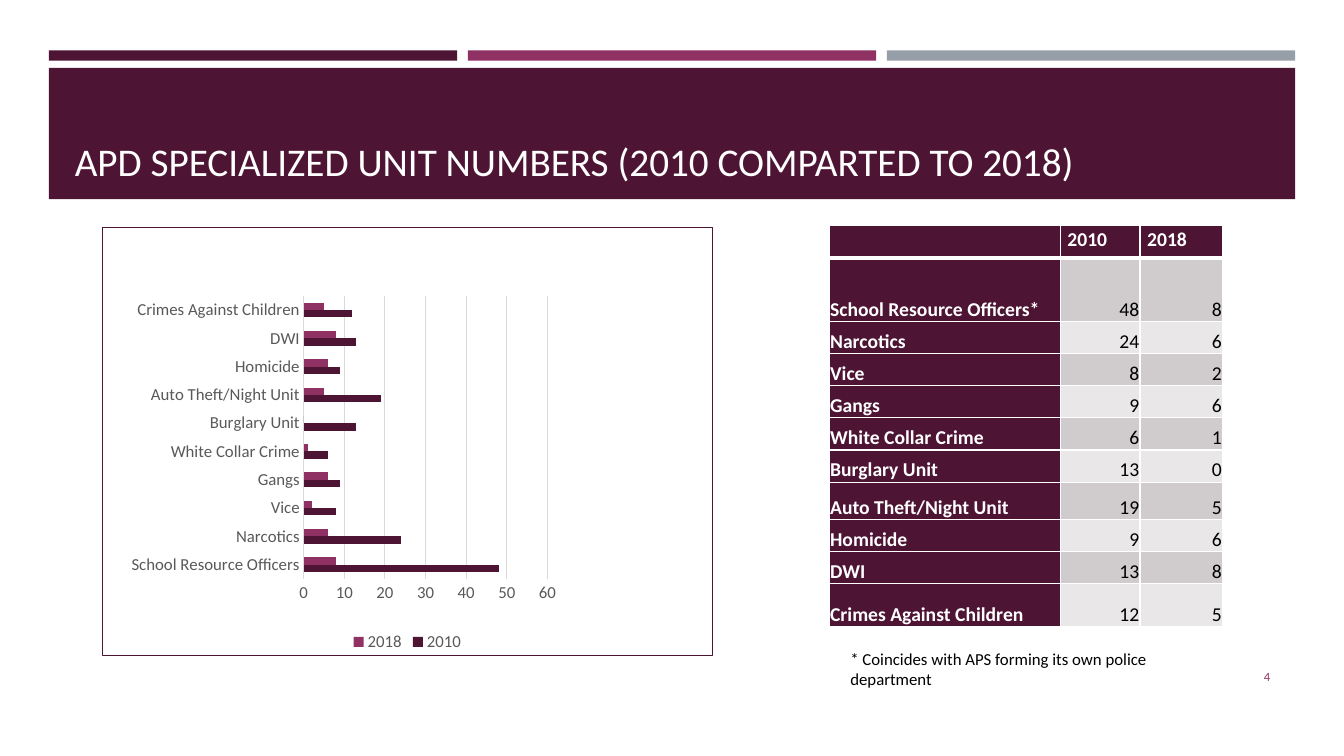
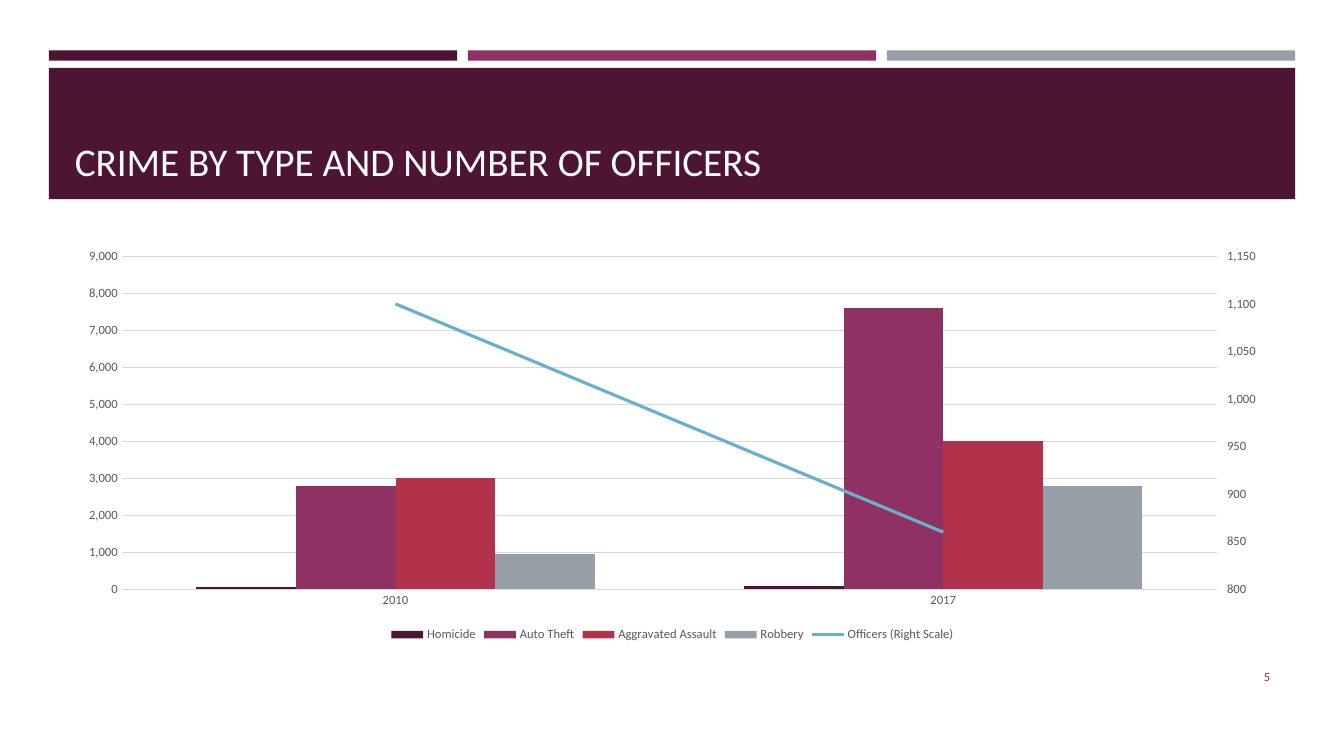
from dataclasses import dataclass

from pptx import Presentation
from pptx.chart.data import CategoryChartData
from pptx.dml.color import RGBColor
from pptx.enum.chart import XL_CHART_TYPE, XL_LEGEND_POSITION, XL_MARKER_STYLE, XL_TICK_MARK
from pptx.enum.shapes import MSO_SHAPE
from pptx.enum.text import MSO_ANCHOR, MSO_AUTO_SIZE, PP_ALIGN
from pptx.oxml import parse_xml
from pptx.oxml.ns import nsdecls, qn
from pptx.util import Cm, Pt

BAR, COLUMN = XL_CHART_TYPE.BAR_CLUSTERED, XL_CHART_TYPE.COLUMN_CLUSTERED
LEGEND_BOTTOM = XL_LEGEND_POSITION.BOTTOM
NO_MARKER = XL_MARKER_STYLE.NONE
TICK_NONE = XL_TICK_MARK.NONE
RECT = MSO_SHAPE.RECTANGLE
TOP, MIDDLE, BOTTOM = MSO_ANCHOR.TOP, MSO_ANCHOR.MIDDLE, MSO_ANCHOR.BOTTOM
NO_FIT = MSO_AUTO_SIZE.NONE
LEFT, RIGHT = PP_ALIGN.LEFT, PP_ALIGN.RIGHT

FONT = "Calibri"
COLORS = {
    "plum": "4D1434", "berry": "903163", "red": "B2324B", "gray": "969FA7",
    "blue": "66B1CE", "white": "FFFFFF", "black": "000000", "label": "595959",
    "grid": "D9D9D9", "row_dark": "D0CCCE", "row_light": "E9E7E8",
}


@dataclass(frozen=True)
class Box:
    """Position and size in centimetres."""
    left: float
    top: float
    width: float
    height: float

    def emu(self) -> tuple:
        return Cm(self.left), Cm(self.top), Cm(self.width), Cm(self.height)


@dataclass(frozen=True)
class Series:
    name: str
    values: tuple
    color: str


@dataclass(frozen=True)
class Unit:
    name: str
    y2010: int
    y2018: int
    height: float = 0.81
    note: str = ""


TITLE_BAND = Box(1.23, 1.71, 31.41, 3.31)
TITLE = Box(1.63, 1.96, 30.63, 2.82)
NUMBER = Box(29.34, 16.54, 2.92, 1.02)
STRIPES = ("plum", "berry", "gray")
STRIPE = Box(1.23, 1.27, 10.29, 0.26)
STRIPE_PITCH = 10.56

UNITS = (
    Unit("School Resource Officers", 48, 8, 1.6, "*"),
    Unit("Narcotics", 24, 6),
    Unit("Vice", 8, 2),
    Unit("Gangs", 9, 6),
    Unit("White Collar Crime", 6, 1),
    Unit("Burglary Unit", 13, 0),
    Unit("Auto Theft/Night Unit", 19, 5, 0.94),
    Unit("Homicide", 9, 6),
    Unit("DWI", 13, 8),
    Unit("Crimes Against Children", 12, 5, 1.07),
)
CRIMES = (
    Series("Homicide", (50, 80), "plum"),
    Series("Auto Theft", (2800, 7600), "berry"),
    Series("Aggravated Assault", (3000, 4000), "red"),
    Series("Robbery", (950, 2800), "gray"),
    Series("Officers (Right Scale)", (1100, 860), "blue"),
)


def rgb(name: str) -> RGBColor:
    return RGBColor.from_string(COLORS[name])


def set_font(font, size: float, color: str, bold: bool = False) -> None:
    font.name, font.size, font.bold = FONT, Pt(size), bold
    font.color.rgb = rgb(color)


def set_line(line, color: str, width: float = 0.75) -> None:
    line.color.rgb = rgb(color)
    line.width = Pt(width)


# Shared parts
def add_band(s, box: Box, color: str):
    sp = s.shapes.add_shape(RECT, *box.emu())
    sp.shadow.inherit = False
    sp.fill.solid()
    sp.fill.fore_color.rgb = rgb(color)
    sp.line.fill.background()
    return sp


def decorate_layout(layout, s) -> None:
    """Place the bands behind the layout's placeholders and move its title."""
    bands = [add_band(s, Box(STRIPE.left + i * STRIPE_PITCH, STRIPE.top, STRIPE.width, STRIPE.height), color)
             for i, color in enumerate(STRIPES)]
    bands.append(add_band(s, TITLE_BAND, "plum"))
    for i, sp in enumerate(bands):
        layout.shapes.element.insert(2 + i, sp.element)
    title = layout.placeholders[0]
    title.left, title.top, title.width, title.height = TITLE.emu()


def set_title(s, text: str) -> None:
    tf = s.shapes.title.text_frame
    tf.text = text
    tf.vertical_anchor, tf.auto_size = BOTTOM, NO_FIT
    p = tf.paragraphs[0]
    p.alignment = LEFT
    set_font(p.font, 28, "white")


def add_text(s, box: Box, text: str, size: float, color: str, align=LEFT, anchor=TOP) -> None:
    tf = s.shapes.add_textbox(*box.emu()).text_frame
    tf.word_wrap, tf.vertical_anchor = True, anchor
    p = tf.paragraphs[0]
    p.text, p.alignment = text, align
    set_font(p.font, size, color)


# Table
def set_borders(cell, bottom: float = 1) -> None:
    tc_pr = cell._tc.get_or_add_tcPr()
    for side, width in (("L", 1), ("R", 1), ("T", 1), ("B", bottom)):
        tc_pr.append(parse_xml(
            f'<a:ln{side} {nsdecls("a")} w="{Pt(width)}"><a:solidFill>'
            f'<a:srgbClr val="{COLORS["white"]}"/></a:solidFill></a:ln{side}>'))


def fill_cell(cell, text: str, fill: str, header: bool, number: bool) -> None:
    set_borders(cell, 3 if header else 1)
    cell.fill.solid()
    cell.fill.fore_color.rgb = rgb(fill)
    cell.margin_left = cell.margin_right = Cm(0.18 if header else 0.02)
    cell.margin_top, cell.margin_bottom = Cm(0 if header else 0.02), 0
    cell.vertical_anchor = TOP if header else BOTTOM
    p = cell.text_frame.paragraphs[0]
    p.text = text
    p.alignment = RIGHT if number else LEFT
    if not number:
        p.line_spacing = 1.07
    set_font(p.font, 14, "black" if number else "white", not number)


def add_unit_table(s) -> None:
    widths = (5.82, 2.01, 2.08)
    heights = (0.81, *(u.height for u in UNITS))
    rows = [("", "2010", "2018")]
    rows += [(u.name + u.note, str(u.y2010), str(u.y2018)) for u in UNITS]
    box = Box(20.9, 5.69, sum(widths), sum(heights))
    table = s.shapes.add_table(len(rows), len(widths), *box.emu()).table
    for col, width in zip(table.columns, widths):
        col.width = Cm(width)
    for i, row in enumerate(rows):
        table.rows[i].height = Cm(heights[i])
        for j, text in enumerate(row):
            number = i > 0 and j > 0
            fill = ("row_light", "row_dark")[i % 2] if number else "plum"
            fill_cell(table.cell(i, j), text, fill, i == 0, number)


# Charts
def add_base_chart(s, kind, box: Box, cats: list, series: tuple, size: float, gap: int):
    data = CategoryChartData(number_format="#,##0")
    data.categories = cats
    for item in series:
        data.add_series(item.name, item.values)
    chart = s.shapes.add_chart(kind, *box.emu(), data).chart
    chart.has_title = False
    set_font(chart.font, 10, "black")
    chart.has_legend = True
    chart.legend.position, chart.legend.include_in_layout = LEGEND_BOTTOM, False
    set_font(chart.legend.font, size, "label")
    plot = chart.plots[0]
    plot.gap_width, plot.overlap, plot.vary_by_categories = gap, 0, False
    for ser, item in zip(plot.series, series):
        ser.format.fill.solid()
        ser.format.fill.fore_color.rgb = rgb(item.color)
    for axis in (chart.category_axis, chart.value_axis):
        axis.major_tick_mark = axis.minor_tick_mark = TICK_NONE
        set_font(axis.tick_labels.font, size, "label")
    chart.category_axis.has_major_gridlines = False
    set_line(chart.category_axis.format.line, "grid")
    chart.value_axis.has_major_gridlines = True
    set_line(chart.value_axis.major_gridlines.format.line, "grid")
    chart.value_axis.format.line.fill.background()
    return chart


def frame_chart(chart, color: str) -> None:
    chart.element.find(qn("c:chart")).addnext(parse_xml(
        f'<c:spPr {nsdecls("c", "a")}><a:noFill/><a:ln w="{Pt(0.75)}"><a:solidFill>'
        f'<a:srgbClr val="{COLORS[color]}"/></a:solidFill></a:ln></c:spPr>'))


def place_plot(chart, x: float, y: float, w: float, h: float) -> None:
    area = chart.element.find(".//" + qn("c:plotArea"))
    for old in area.findall(qn("c:layout")):
        area.remove(old)
    sizes = "".join(f'<c:{tag} val="{val}"/>' for tag, val in zip("xywh", (x, y, w, h)))
    area.insert(0, parse_xml(
        f'<c:layout {nsdecls("c")}><c:manualLayout><c:layoutTarget val="inner"/>'
        f'<c:xMode val="edge"/><c:yMode val="edge"/>{sizes}</c:manualLayout></c:layout>'))


def move_last_to_right_axis(chart, color: str, size: float) -> None:
    """Turn the last column series into a line on a second value axis."""
    bars = chart.element.find(".//" + qn("c:barChart"))
    ser = bars.findall(qn("c:ser"))[-1]
    for tag in ("c:invertIfNegative", "c:spPr"):
        for old in ser.findall(qn(tag)):
            ser.remove(old)
    line_chart = parse_xml(
        f'<c:lineChart {nsdecls("c")}><c:grouping val="standard"/><c:varyColors val="0"/>'
        '<c:marker val="1"/><c:axId val="5001"/><c:axId val="5002"/></c:lineChart>')
    line_chart.insert(2, ser)
    bars.addnext(line_chart)
    right_axis = parse_xml(
        f'<c:valAx {nsdecls("c", "a")}><c:axId val="5002"/><c:scaling><c:orientation val="minMax"/>'
        '<c:max val="1150"/><c:min val="800"/></c:scaling><c:delete val="0"/><c:axPos val="r"/>'
        '<c:numFmt formatCode="#,##0" sourceLinked="0"/><c:majorTickMark val="out"/>'
        '<c:minorTickMark val="none"/><c:tickLblPos val="nextTo"/>'
        '<c:spPr><a:ln><a:noFill/></a:ln></c:spPr><c:txPr><a:bodyPr/><a:p><a:pPr>'
        f'<a:defRPr sz="{int(size * 100)}"><a:solidFill><a:srgbClr val="{COLORS["label"]}"/></a:solidFill>'
        f'<a:latin typeface="{FONT}"/></a:defRPr></a:pPr><a:endParaRPr lang="en-US"/></a:p></c:txPr>'
        '<c:crossAx val="5001"/><c:crosses val="max"/><c:crossBetween val="between"/>'
        '<c:majorUnit val="50"/></c:valAx>')
    hidden_axis = parse_xml(
        f'<c:catAx {nsdecls("c")}><c:axId val="5001"/><c:scaling><c:orientation val="minMax"/></c:scaling>'
        '<c:delete val="1"/><c:axPos val="b"/><c:crossAx val="5002"/><c:crosses val="autoZero"/></c:catAx>')
    bars.getparent().find(qn("c:valAx")).addnext(right_axis)
    right_axis.addnext(hidden_axis)
    officers = chart.plots[1].series[0]
    officers.smooth = False
    officers.marker.style = NO_MARKER
    set_line(officers.format.line, color, 2.25)


# Slides
def build_units(s) -> None:
    add_unit_table(s)
    series = (Series("2010", tuple(u.y2010 for u in UNITS), "plum"),
              Series("2018", tuple(u.y2018 for u in UNITS), "berry"))
    chart = add_base_chart(s, BAR, Box(2.57, 5.72, 15.39, 10.82), [u.name for u in UNITS], series, 12, 182)
    frame_chart(chart, "plum")
    place_plot(chart, 0.33, 0.16, 0.4, 0.66)
    add_text(s, Box(21.18, 16.23, 9.45, 1.27),
             "* Coincides with APS forming its own police department", 12, "black")


def build_crime(s) -> None:
    chart = add_base_chart(s, COLUMN, Box(1.63, 6.07, 30.63, 10.21), ["2010", "2017"], CRIMES, 9, 150)
    axis = chart.value_axis
    axis.minimum_scale, axis.maximum_scale, axis.major_unit = 0, 9000, 1000
    axis.tick_labels.number_format, axis.tick_labels.number_format_is_linked = "#,##0", False
    move_last_to_right_axis(chart, CRIMES[-1].color, 9)


def main() -> None:
    prs = Presentation()
    prs.slide_width, prs.slide_height = Cm(33.87), Cm(19.05)
    layout = prs.slide_layouts[5]
    pages = (("APD SPECIALIZED UNIT NUMBERS (2010 COMPARTED TO 2018)", build_units),
             ("CRIME BY TYPE AND NUMBER OF OFFICERS", build_crime))
    for number, (title, build) in enumerate(pages, start=4):
        s = prs.slides.add_slide(layout)
        if number == 4:
            decorate_layout(layout, s)
        set_title(s, title)
        build(s)
        add_text(s, NUMBER, str(number), 9, "berry", RIGHT, MIDDLE)
    prs.save("out.pptx")


if __name__ == "__main__":
    main()
